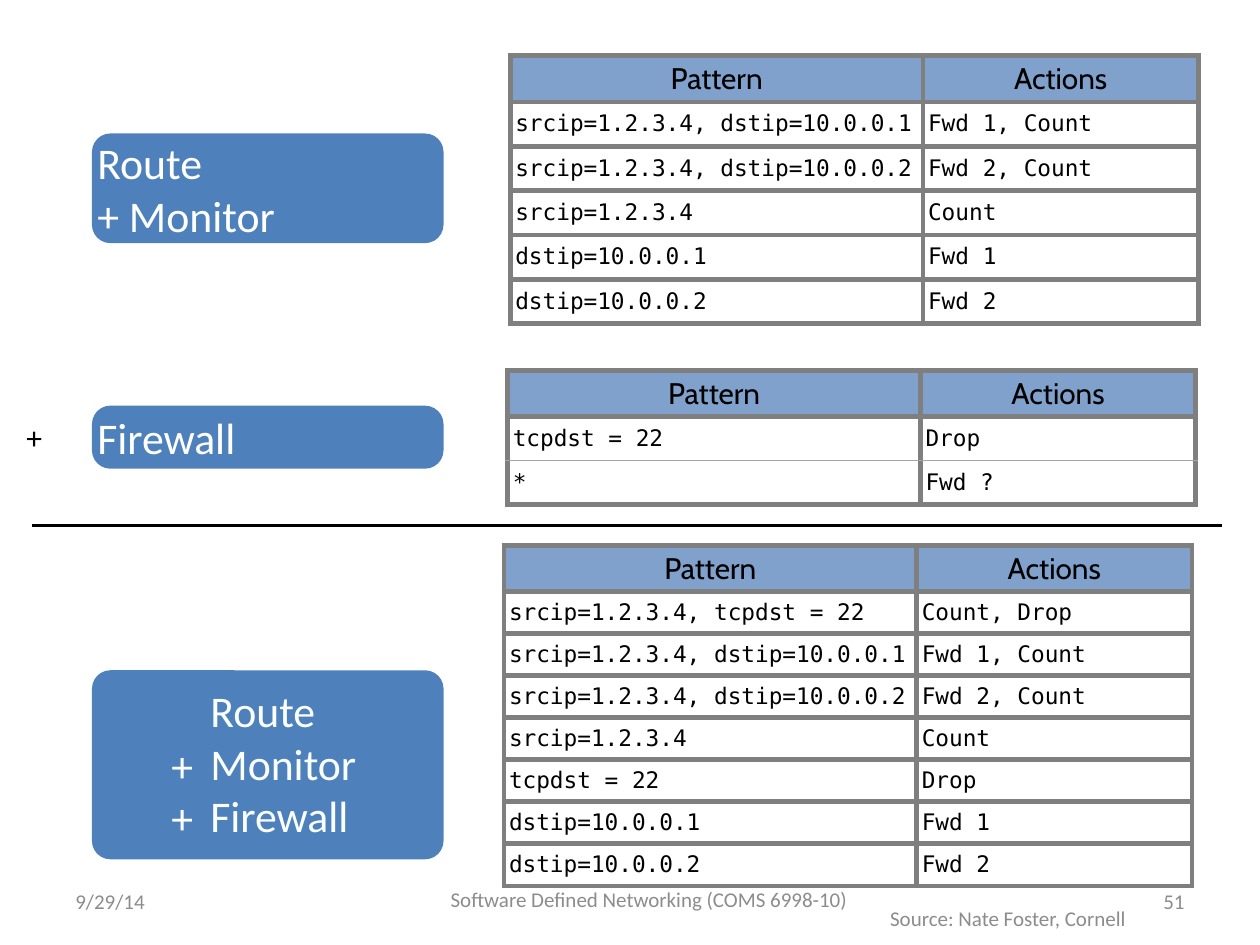
import pptx
import pptx.dml.color
import pptx.enum.shapes
import pptx.enum.text
import pptx.oxml.ns
import pptx.util
import lxml.etree

COLORS = {
    "label": "4E81BC", "header": "80A1CB", "cell": "FFFFFF", "border": "7F7F7F",
    "thin": "A4A5A4", "black": "000000", "white": "FFFFFF", "sum": "FBFFFF",
    "footer": "8C8C8C",
}
# The slide is a grid of 100 columns by 75 rows; boxes are (left, top, width, height)
COLUMNS, ROWS = 100, 75
WIDTH, HEIGHT = pptx.util.Inches(10), pptx.util.Inches(7.5)
ALIGN = pptx.enum.text.PP_ALIGN
MIDDLE = pptx.enum.text.MSO_ANCHOR.MIDDLE
CELL_MARGIN = pptx.util.Inches(0.04)


def across(columns):
    return round(WIDTH * columns / COLUMNS)


def down(rows):
    return round(HEIGHT * rows / ROWS)


def place(box):
    left, top, width, height = box
    return across(left), down(top), across(width), down(height)


def rgb(name):
    return pptx.dml.color.RGBColor.from_string(COLORS[name])


def style_text(frame, size, font, color, align=ALIGN.LEFT):
    for para in frame.paragraphs:
        para.alignment = align
        for span in para.runs:
            span.font.size = pptx.util.Pt(size)
            span.font.name = font
            span.font.color.rgb = rgb(color)


def set_margins(frame, x, y):
    frame.margin_left = frame.margin_right = pptx.util.Inches(x)
    frame.margin_top = frame.margin_bottom = pptx.util.Inches(y)


def add_text(page, box, text, size, color, align=ALIGN.LEFT, wrap=False):
    frame = page.shapes.add_textbox(*place(box)).text_frame
    frame.word_wrap = wrap
    frame.vertical_anchor = MIDDLE
    if not wrap:
        set_margins(frame, 0, 0)
    frame.text = text
    style_text(frame, size, "Calibri", color, align)


def add_label(page, box, text=""):
    label = page.shapes.add_shape(
        pptx.enum.shapes.MSO_SHAPE.ROUNDED_RECTANGLE, *place(box))
    label.adjustments[0] = 1.46 / box[3]  # same corner radius at every height
    label.shadow.inherit = False
    label.fill.solid()
    label.fill.fore_color.rgb = rgb("label")
    label.line.fill.background()
    frame = label.text_frame
    set_margins(frame, 0, 0)
    frame.vertical_anchor = MIDDLE
    if text:
        frame.text = text
        style_text(frame, 25, "Calibri", "white")


def set_border(cell, side, color, width):
    line = lxml.etree.SubElement(
        cell._tc.get_or_add_tcPr(), pptx.oxml.ns.qn("a:ln" + side),
        w=str(pptx.util.Pt(width)))
    fill = lxml.etree.SubElement(line, pptx.oxml.ns.qn("a:solidFill"))
    lxml.etree.SubElement(fill, pptx.oxml.ns.qn("a:srgbClr"), val=COLORS[color])


def add_rules(page, box, rules, row_height, thin_inside=False):
    """Pattern/action table: one header row, then one row per rule."""
    lines = [("Pattern", "Actions")] + rules
    table = page.shapes.add_table(len(lines), 2, *place(box)).table
    for column, share in zip(table.columns, (0.6, 0.4)):
        column.width = across(box[2] * share)
    for i, line in enumerate(lines):
        table.rows[i].height = down(row_height if i else 3.6)
        for j, text in enumerate(line):
            cell = table.cell(i, j)
            cell.margin_left = cell.margin_right = CELL_MARGIN
            cell.margin_top = cell.margin_bottom = CELL_MARGIN
            cell.vertical_anchor = MIDDLE
            for side in "LRTB":
                inside = (side == "T" and i > 1) or (side == "B" and 0 < i < len(rules))
                if thin_inside and inside:
                    set_border(cell, side, "thin", 1)
                else:
                    set_border(cell, side, "border", 3)
            cell.fill.solid()
            cell.fill.fore_color.rgb = rgb("cell" if i else "header")
            cell.text_frame.text = text
            if i:
                style_text(cell.text_frame, 13, "DejaVu Sans Mono", "black")
            else:
                style_text(cell.text_frame, 17, "Cabin", "black", ALIGN.CENTER)


def add_divider(page, left, right, top):
    line = page.shapes.add_connector(
        pptx.enum.shapes.MSO_CONNECTOR.STRAIGHT,
        across(left), down(top), across(right), down(top))
    line.line.color.rgb = rgb("black")
    line.line.width = pptx.util.Pt(2)
    lxml.etree.SubElement(line._element.spPr, pptx.oxml.ns.qn("a:effectLst"))


def add_sum_label(page, box):
    """Label for the combined policy, with the plus signs in their own column."""
    left, top, _, _ = box
    add_label(page, box)
    add_text(page, (left + 9.4, top + 1, 12.1, 12.7),
             "Route\nMonitor\nFirewall", 25, "sum")
    add_text(page, (left + 6.3, top + 5.4, 1.7, 8.4), "+\n+", 25, "sum")


def add_footer(page, top):
    notes = [
        ((71.7, top, 23.3, 4), "51", ALIGN.RIGHT),
        ((62.5, top + 1.2, 35, 4.3), "Source: Nate Foster, Cornell", ALIGN.CENTER),
        ((5, top, 23.3, 4), "9/29/14", ALIGN.LEFT),
        ((34.2, top - 0.3, 35, 4.3),
         "Software Defined Networking (COMS 6998-10) ", ALIGN.CENTER),
    ]
    for box, text, align in notes:
        add_text(page, box, text, 12, "footer", align, wrap=True)


def main():
    deck = pptx.Presentation()
    deck.slide_width, deck.slide_height = WIDTH, HEIGHT
    page = deck.slides.add_slide(deck.slide_layouts[6])

    both = [("srcip=1.2.3.4, dstip=10.0.0.1", "Fwd 1, Count"),
            ("srcip=1.2.3.4, dstip=10.0.0.2", "Fwd 2, Count"),
            ("srcip=1.2.3.4", "Count")]
    route = [("dstip=10.0.0.1", "Fwd 1"), ("dstip=10.0.0.2", "Fwd 2")]
    drop = ("tcpdst = 22", "Drop")

    # Route + Monitor
    add_rules(page, (40.5, 4.4, 54.6, 21.2), both + route, 3.52)
    add_label(page, (7.3, 10.6, 27.9, 8.7), "Route\n+ Monitor")

    # Firewall, added below
    add_text(page, (2.1, 33.2, 1.3, 3), "+", 18, "black")
    add_rules(page, (40.3, 29.4, 54.6, 10.6), [drop, ("*", "Fwd ?")], 3.5,
              thin_inside=True)
    add_label(page, (7.3, 32.2, 27.9, 5), "Firewall")
    add_divider(page, 2.5, 97, 41.7)

    # Combined policy
    add_rules(page, (40, 43.3, 54.6, 27),
              [("srcip=1.2.3.4, tcpdst = 22", "Count, Drop")] + both + [drop] + route,
              3.34)
    add_sum_label(page, (7.3, 53.2, 27.9, 15))

    add_footer(page, 69.5)
    deck.save("out.pptx")


if __name__ == "__main__":
    main()
